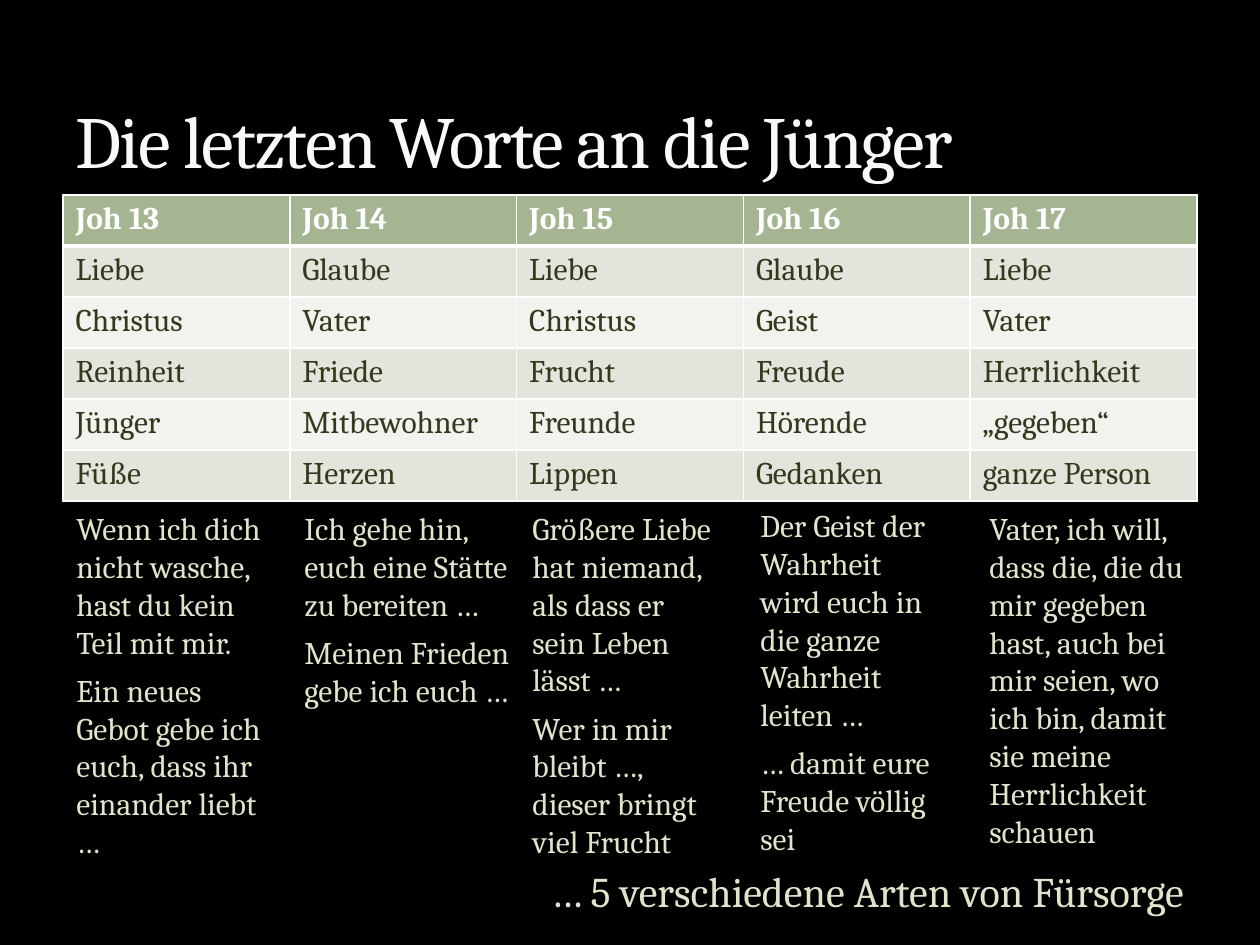
from dataclasses import dataclass

import pptx
import pptx.dml.color
import pptx.enum.text
import pptx.oxml
import pptx.oxml.ns
import pptx.util

SCALE = 914400 / 126
ANCHOR = pptx.enum.text.MSO_ANCHOR
ALIGN = pptx.enum.text.PP_ALIGN
AUTO = pptx.enum.text.MSO_AUTO_SIZE


@dataclass(frozen=True)
class Theme:
    face: str = "Cambria"
    back: str = "000000"
    title: str = "F9F9F9"
    body: str = "DFE5CA"
    head: str = "A5B592"
    light: str = "FFFFFF"
    dark: str = "333A1C"
    bands: tuple[str, str] = ("E1E5DC", "F0F3EE")
    big: float = 42
    mid: float = 24.1
    small: float = 18


@dataclass(frozen=True)
class Note:
    left: int
    top: int
    width: int
    height: int
    lines: tuple[str, ...]
    size: float
    color: str
    align: ALIGN = ALIGN.LEFT
    anchor: ANCHOR = ANCHOR.TOP
    grow: bool = False
    track: int = 0


THEME = Theme()

ROWS = (
    ("Joh 13", "Joh 14", "Joh 15", "Joh 16", "Joh 17"),
    ("Liebe", "Glaube", "Liebe", "Glaube", "Liebe"),
    ("Christus", "Vater", "Christus", "Geist", "Vater"),
    ("Reinheit", "Friede", "Frucht", "Freude", "Herrlichkeit"),
    ("Jünger", "Mitbewohner", "Freunde", "Hörende", "„gegeben“"),
    ("Füße", "Herzen", "Lippen", "Gedanken", "ganze Person"),
)


def verse(left: int, top: int, width: int, height: int, *lines: str) -> Note:
    return Note(left, top, width, height, lines, THEME.small, THEME.body, grow=True)


NOTES = (
    Note(63, 21, 1134, 168, ("Die letzten Worte an die Jünger",),
         THEME.big, THEME.title, anchor=ANCHOR.BOTTOM, track=-100),
    Note(263, 859, 934, 69, ("… 5 verschiedene Arten von Fürsorge",),
         THEME.mid, THEME.body, align=ALIGN.RIGHT),
    verse(64, 503, 218, 404,
          "Wenn ich dich nicht wasche, hast du kein Teil mit mir.",
          "Ein neues Gebot gebe ich euch, dass ihr einander liebt …"),
    verse(292, 503, 238, 291,
          "Ich gehe hin, euch eine Stätte zu bereiten …",
          "Meinen Frieden gebe ich euch …"),
    verse(520, 503, 209, 367,
          "Größere Liebe hat niemand, als dass er sein Leben lässt …",
          "Wer in mir bleibt …, dieser bringt viel Frucht"),
    verse(748, 500, 208, 367,
          "Der Geist der Wahrheit wird euch in die ganze Wahrheit leiten …",
          "… damit eure Freude völlig sei"),
    verse(977, 503, 238, 357,
          "Vater, ich will, dass die, die du mir gegeben hast, auch bei mir "
          "seien, wo ich bin, damit sie meine Herrlichkeit schauen"),
)


def px(count: int) -> pptx.util.Emu:
    return pptx.util.Emu(round(count * SCALE))


def rgb(code: str) -> pptx.dml.color.RGBColor:
    return pptx.dml.color.RGBColor.from_string(code)


def style(para, size: float, color: str, bold: bool = False) -> None:
    font = para.font
    font.name = THEME.face
    font.size = pptx.util.Pt(size)
    font.bold = bold
    font.color.rgb = rgb(color)


def edge(cell, side: str, width: int) -> None:
    space = pptx.oxml.ns.nsdecls("a")
    line = pptx.oxml.parse_xml(
        f'<a:ln{side} {space} w="{pptx.util.Pt(width)}"><a:solidFill>'
        f'<a:srgbClr val="{THEME.light}"/></a:solidFill></a:ln{side}>')
    cell._tc.get_or_add_tcPr().append(line)


def draw_grid(slide) -> None:
    frame = slide.shapes.add_table(
        len(ROWS), len(ROWS[0]), px(63), px(195), px(1134), px(306))
    grid = frame.table
    grid.horz_banding = False
    for row in grid.rows:
        row.height = px(51)
    for r, words in enumerate(ROWS):
        top = r == 0
        for c, word in enumerate(words):
            cell = grid.cell(r, c)
            wide = {"L": 1, "R": 1, "T": 3 if r == 1 else 1, "B": 3 if top else 1}
            for side, width in wide.items():
                edge(cell, side, width)
            cell.fill.solid()
            cell.fill.fore_color.rgb = rgb(
                THEME.head if top else THEME.bands[(r - 1) % 2])
            cell.text = word
            style(cell.text_frame.paragraphs[0], THEME.small,
                  THEME.light if top else THEME.dark, top)


def draw_note(slide, note: Note) -> None:
    box = slide.shapes.add_textbox(
        px(note.left), px(note.top), px(note.width), px(note.height))
    frame = box.text_frame
    frame.word_wrap = True
    frame.auto_size = AUTO.SHAPE_TO_FIT_TEXT if note.grow else AUTO.NONE
    frame.vertical_anchor = note.anchor
    for i, line in enumerate(note.lines):
        para = frame.paragraphs[0] if i == 0 else frame.add_paragraph()
        para.alignment = note.align
        if note.grow:
            para.space_after = pptx.util.Pt(6)
        run = para.add_run()
        run.text = line
        if note.track:
            run._r.get_or_add_rPr().set("spc", str(note.track))
        style(para, note.size, note.color)


def main() -> None:
    deck = pptx.Presentation()
    deck.slide_width, deck.slide_height = px(1260), px(945)
    slide = deck.slides.add_slide(deck.slide_layouts[6])
    slide.background.fill.solid()
    slide.background.fill.fore_color.rgb = rgb(THEME.back)
    draw_grid(slide)
    for note in NOTES:
        draw_note(slide, note)
    deck.save("out.pptx")


if __name__ == "__main__":
    main()
